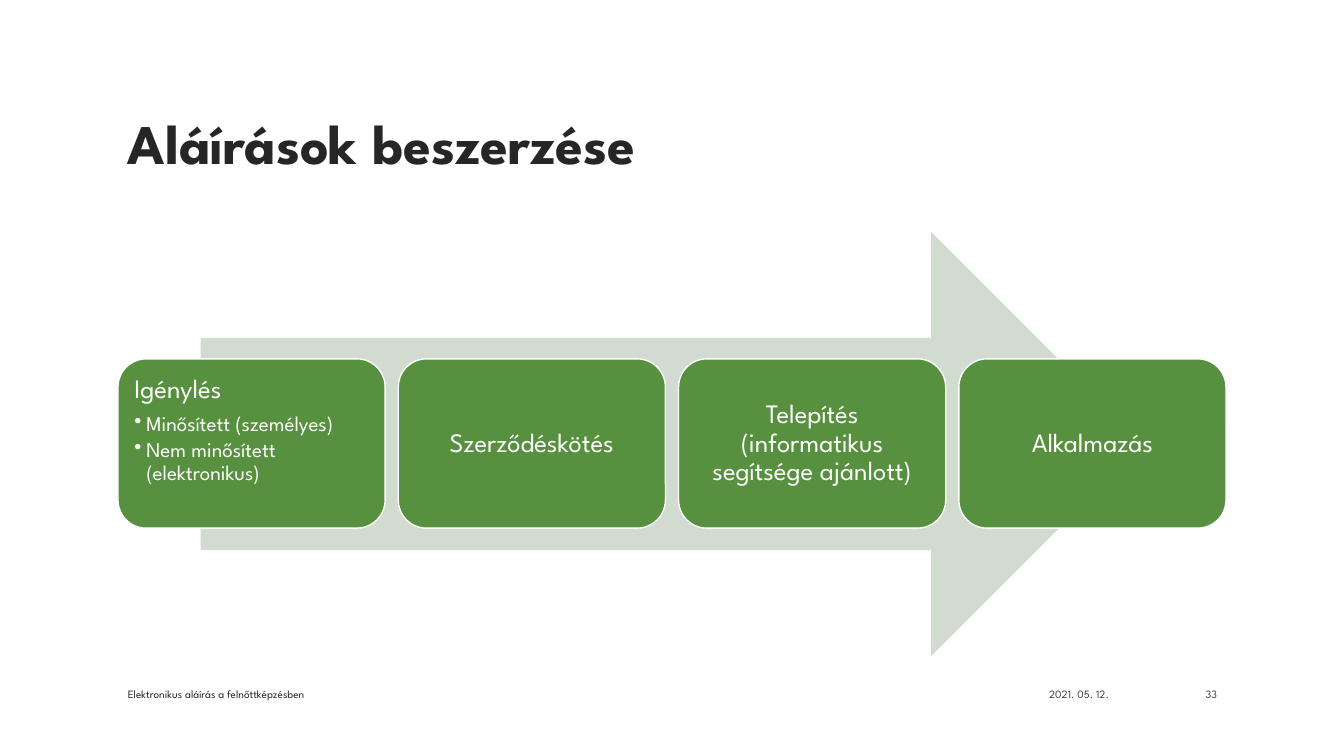
from dataclasses import dataclass

from lxml import etree
from pptx import Presentation
from pptx.dml.color import RGBColor
from pptx.enum.shapes import MSO_SHAPE
from pptx.enum.text import MSO_ANCHOR, PP_ALIGN
from pptx.oxml.ns import qn
from pptx.util import Inches, Pt

ARROW, CARD = MSO_SHAPE.RIGHT_ARROW, MSO_SHAPE.ROUNDED_RECTANGLE
TOP, MIDDLE, BOTTOM = MSO_ANCHOR.TOP, MSO_ANCHOR.MIDDLE, MSO_ANCHOR.BOTTOM
LEFT, CENTER, RIGHT = PP_ALIGN.LEFT, PP_ALIGN.CENTER, PP_ALIGN.RIGHT


@dataclass(frozen=True)
class Theme:
    font: str = "League Spartan"
    ink: str = "262626"
    muted: str = "404040"
    white: str = "FFFFFF"
    green: str = "57903F"
    pale_green: str = "D1DBCF"
    title_size: int = 40
    step_size: int = 19
    detail_size: int = 15
    footer_size: int = 8


THEME = Theme()
CARD_LEFT, CARD_TOP, CARD_STEP = 1.17, 3.56, 2.78
CARD_WIDTH, CARD_HEIGHT = 2.65, 1.68

STEPS = [
    ("Igénylés", ["Minősített (személyes)", "Nem minősített (elektronikus)"]),
    ("Szerződéskötés", []),
    ("Telepítés\v(informatikus segítsége ajánlott)", []),
    ("Alkalmazás", []),
]


def write(para, text, size, color, align=LEFT, bold=False, line_spacing=None):
    para.text = text
    para.alignment = align
    para.line_spacing = line_spacing
    for run in para.runs:
        font = run.font
        font.name, font.size, font.bold = THEME.font, Pt(size), bold
        font.color.rgb = RGBColor.from_string(color)


def add_bullet(para):
    properties = para._p.get_or_add_pPr()
    properties.set("marL", str(Inches(0.12)))
    properties.set("indent", str(Inches(-0.12)))
    etree.SubElement(properties, qn("a:buChar"), char="•")


def add_label(page, text, left, top, width, height, anchor, size, color, **style):
    box = page.shapes.add_textbox(*map(Inches, (left, top, width, height)))
    box.text_frame.word_wrap = True
    box.text_frame.vertical_anchor = anchor
    write(box.text_frame.paragraphs[0], text, size, color, **style)


def add_filled_shape(page, kind, left, top, width, height, fill):
    shape = page.shapes.add_shape(kind, *map(Inches, (left, top, width, height)))
    shape.shadow.inherit = False
    shape.fill.solid()
    shape.fill.fore_color.rgb = RGBColor.from_string(fill)
    shape.line.fill.background()
    return shape


def add_step(page, left, heading, details):
    """Draw one step card; a card with details is set top left, others centred."""
    card = add_filled_shape(page, CARD, left, CARD_TOP, CARD_WIDTH, CARD_HEIGHT, THEME.green)
    card.line.color.rgb = RGBColor.from_string(THEME.white)
    card.line.width = Pt(1)
    frame = card.text_frame
    frame.word_wrap = True
    frame.margin_left = frame.margin_right = Inches(0.08)
    frame.margin_top = frame.margin_bottom = Inches(0.08)
    frame.vertical_anchor = TOP if details else MIDDLE
    title = frame.paragraphs[0]
    write(title, heading, THEME.step_size, THEME.white,
          align=LEFT if details else CENTER, line_spacing=0.9)
    if details:
        title.space_after = Pt(7)
    for detail in details:
        para = frame.add_paragraph()
        para.level = 1
        write(para, detail, THEME.detail_size, THEME.white, line_spacing=0.9)
        para.space_after = Pt(2)
        add_bullet(para)


def add_footer(page, text, left, width, color, align=LEFT):
    add_label(page, text, left, 6.6, width, 0.4, BOTTOM, THEME.footer_size, color, align=align)


def main():
    deck = Presentation()
    deck.slide_width, deck.slide_height = Inches(13.33), Inches(7.5)
    page = deck.slides.add_slide(deck.slide_layouts[6])

    add_label(page, "Aláírások beszerzése", 1.17, 0.7, 11, 1.5, MIDDLE,
              THEME.title_size, THEME.ink, bold=True, line_spacing=0.9)
    add_filled_shape(page, ARROW, 1.99, 2.3, 9.35, 4.21, THEME.pale_green)
    for index, (heading, details) in enumerate(STEPS):
        add_step(page, CARD_LEFT + index * CARD_STEP, heading, details)

    add_footer(page, "Elektronikus aláírás a felnőttképzésben", 1.17, 6.36, THEME.ink)
    add_footer(page, "2021. 05. 12.", 7.94, 3.16, THEME.muted, RIGHT)
    add_footer(page, "33", 11.25, 0.92, THEME.muted, RIGHT)
    deck.save("out.pptx")


if __name__ == "__main__":
    main()
